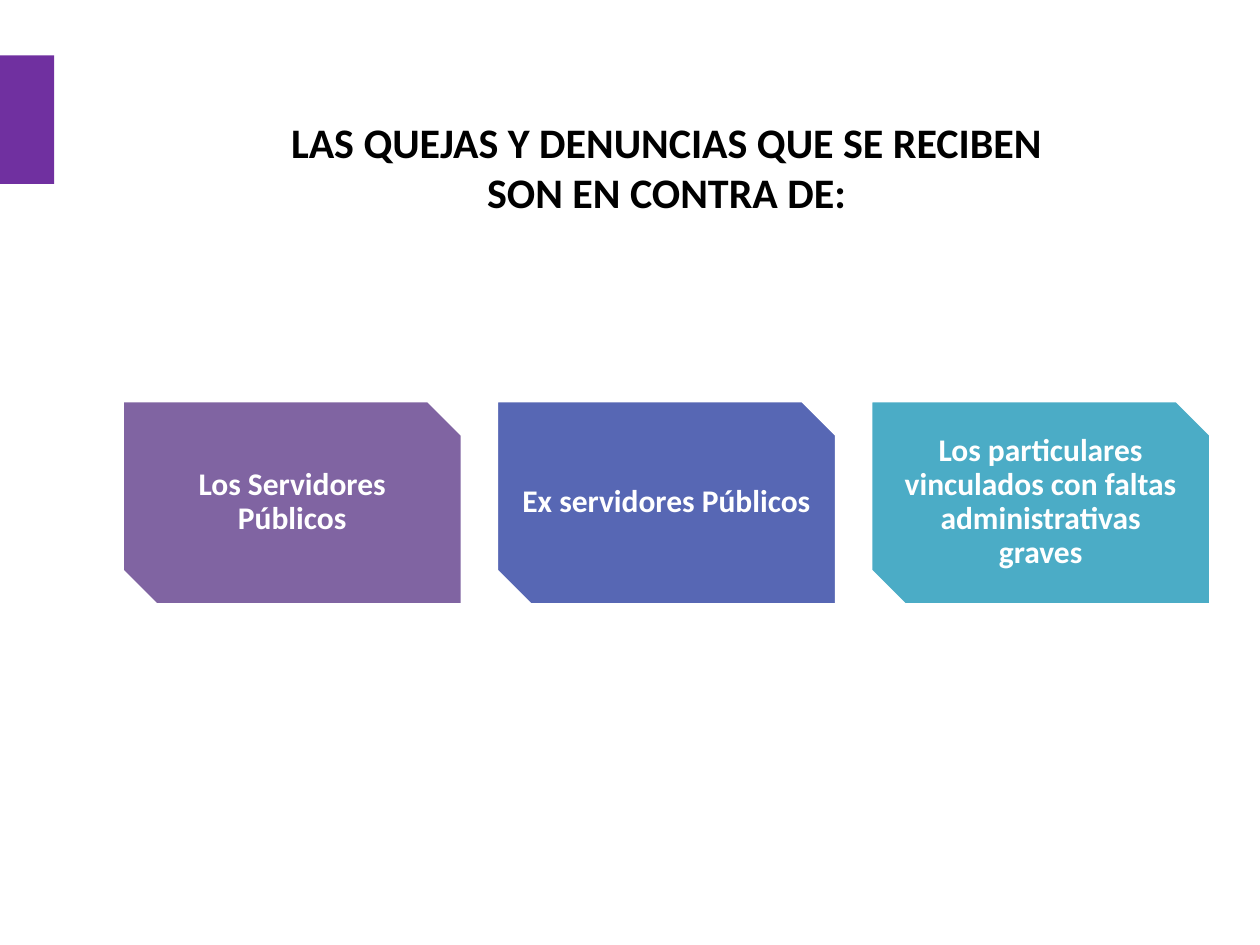
"""Build the slide on who complaints and reports are filed against."""
from dataclasses import dataclass

from pptx import Presentation
from pptx import util as u
from pptx.dml.color import RGBColor
from pptx.enum import shapes, text


@dataclass(frozen=True)
class Theme:
    font: str = "Calibri"
    title_size: int = 24
    card_size: int = 18
    ink: str = "000000"
    paper: str = "FFFFFF"
    accent: str = "7030A0"


@dataclass(frozen=True)
class Grid:
    left: float = 0.97
    top: float = 3.18
    width: float = 2.7
    height: float = 1.62
    gap: float = 0.27

    def column(self, i: int) -> tuple:
        return self.left + i * (self.width + self.gap), self.top, self.width, self.height


@dataclass(frozen=True)
class Card:
    label: str
    color: str


THEME = Theme()
GRID = Grid()
TITLE = "LAS QUEJAS Y DENUNCIAS QUE SE RECIBEN SON EN CONTRA DE:"
CARDS = (
    Card("Los Servidores Públicos", "8064A2"),
    Card("Ex servidores Públicos", "5767B4"),
    Card("Los particulares vinculados con faltas administrativas graves", "4BACC6"),
)


def set_text(sp, content: str, size: int, color: str, margin: float, spacing: float) -> None:
    tf = sp.text_frame
    tf.text = content
    tf.word_wrap = True
    tf.auto_size = text.MSO_AUTO_SIZE.NONE
    tf.vertical_anchor = text.MSO_ANCHOR.MIDDLE
    tf.margin_left = tf.margin_right = tf.margin_top = tf.margin_bottom = u.Inches(margin)
    p = tf.paragraphs[0]
    p.alignment = text.PP_ALIGN.CENTER
    p.line_spacing = spacing
    font = p.runs[0].font
    font.name, font.size, font.bold = THEME.font, u.Pt(size), True
    font.color.rgb = RGBColor.from_string(color)


def add_block(s, kind: shapes.MSO_SHAPE, box: tuple, color: str):
    sp = s.shapes.add_shape(kind, *map(u.Inches, box))
    sp.shadow.inherit = False
    sp.fill.solid()
    sp.fill.fore_color.rgb = RGBColor.from_string(color)
    sp.line.fill.background()
    return sp


def add_title(s) -> None:
    sp = s.shapes.title
    sp.left, sp.top, sp.width, sp.height = map(u.Inches, (1.88, 0.76, 6.82, 1.13))
    set_text(sp, TITLE, THEME.title_size, THEME.ink, 0.2, 1.0)


def add_card(s, card: Card, i: int) -> None:
    sp = add_block(s, shapes.MSO_SHAPE.SNIP_2_DIAG_RECTANGLE, GRID.column(i), card.color)
    sp.line.color.rgb = RGBColor.from_string(THEME.paper)
    sp.line.width = u.Pt(2)
    set_text(sp, card.label, THEME.card_size, THEME.paper, 0.07, 0.9)


def main() -> None:
    prs = Presentation()
    prs.slide_width, prs.slide_height = u.Inches(10), u.Inches(7.5)
    s = prs.slides.add_slide(prs.slide_layouts.get_by_name("Title Only"))
    add_block(s, shapes.MSO_SHAPE.RECTANGLE, (0, 0.44, 0.43, 1.02), THEME.accent)
    add_title(s)
    for i, card in enumerate(CARDS):
        add_card(s, card, i)
    prs.save("out.pptx")


if __name__ == "__main__":
    main()
